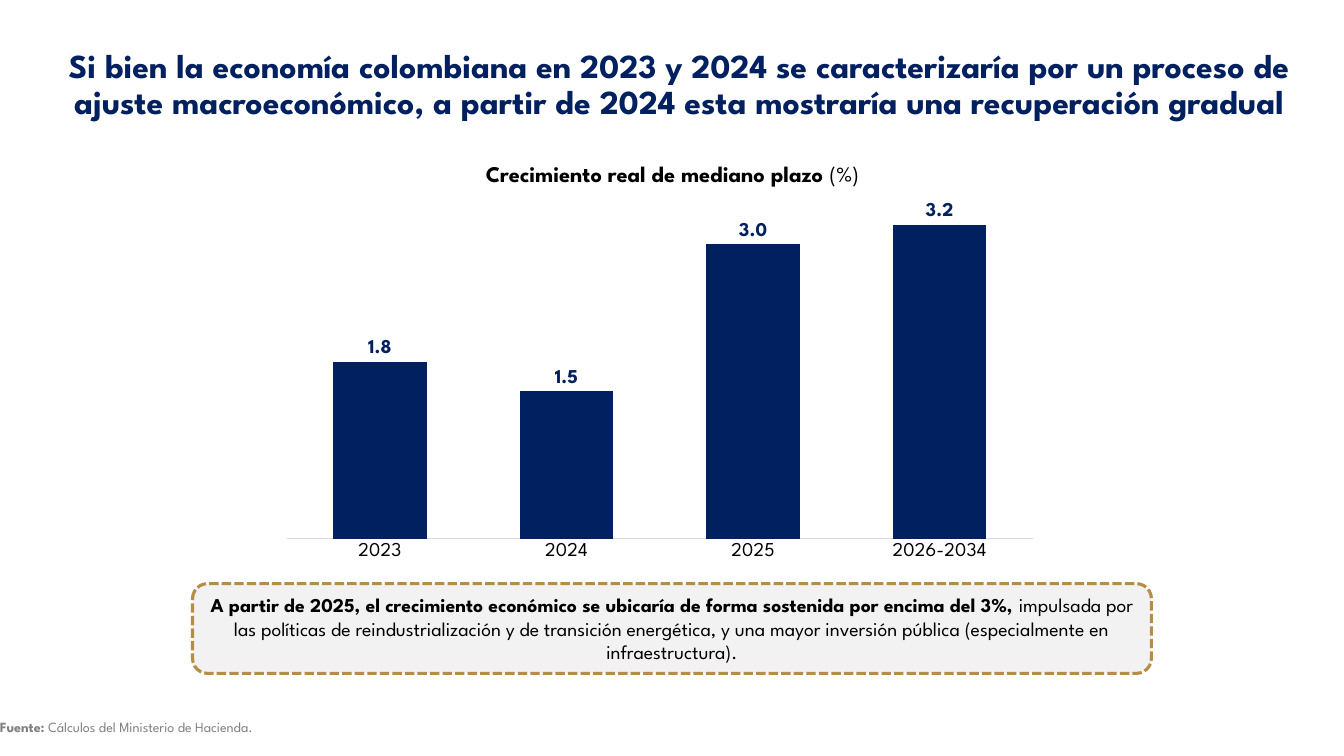
from lxml import etree
from pptx import Presentation
from pptx.chart import data
from pptx.dml import color
from pptx.enum import chart as charts, dml, shapes, text
from pptx.oxml import ns
from pptx.util import Inches, Pt

FONT = "League Spartan"
COLORS = {
    "navy": "002060",
    "black": "000000",
    "grey": "808080",
    "axis": "D9D9D9",
    "panel": "F2F2F2",
    "gold": "B58D47",
}
GROWTH = {"2023": 1.8, "2024": 1.5, "2025": 3.0, "2026-2034": 3.2}


def rgb(name):
    return color.RGBColor.from_string(COLORS[name])


def style_font(font, size, tone, bold):
    font.name = FONT
    font.size = Pt(size)
    font.bold = bold
    font.color.rgb = rgb(tone)


def write(frame, strong, plain="", size=14, tone="black", spacing=None,
          align=text.PP_ALIGN.CENTER, anchor=text.MSO_ANCHOR.TOP):
    frame.word_wrap = True
    frame.vertical_anchor = anchor
    paragraph = frame.paragraphs[0]
    paragraph.alignment = align
    paragraph.line_spacing = spacing
    for words, bold in ((strong, True), (plain, False)):
        if words:
            run = paragraph.add_run()
            run.text = words
            style_font(run.font, size, tone, bold)


def add_headline(slide, left, top, width, height):
    headline = slide.shapes.title
    headline.left, headline.top = Inches(left), Inches(top)
    headline.width, headline.height = Inches(width), Inches(height)
    write(headline.text_frame,
          "Si bien la economía colombiana en 2023 y 2024 se caracterizaría por un proceso de "
          "ajuste macroeconómico, a partir de 2024 esta mostraría una recuperación gradual",
          size=24, tone="navy", spacing=0.9, anchor=text.MSO_ANCHOR.MIDDLE)


def add_caption(slide, left, top, width, height, strong, plain, **style):
    caption = slide.shapes.add_textbox(Inches(left), Inches(top), Inches(width), Inches(height))
    write(caption.text_frame, strong, plain, **style)


def set_plot_area(growth_chart, **fractions):
    plot_area = growth_chart.plots[0]._element.getparent()
    for layout in plot_area.findall(ns.qn("c:layout")):
        plot_area.remove(layout)
    layout = etree.Element(ns.qn("c:layout"))
    manual = etree.SubElement(layout, ns.qn("c:manualLayout"))
    settings = {"layoutTarget": "inner", "xMode": "edge", "yMode": "edge", **fractions}
    for tag, value in settings.items():
        etree.SubElement(manual, ns.qn("c:" + tag)).set("val", str(value))
    plot_area.insert(0, layout)


def add_growth_chart(slide, left, top, width, height):
    growth = data.CategoryChartData(number_format="0.0")
    growth.categories = list(GROWTH)
    growth.add_series("Crecimiento real", list(GROWTH.values()))
    growth_chart = slide.shapes.add_chart(
        charts.XL_CHART_TYPE.COLUMN_CLUSTERED,
        Inches(left), Inches(top), Inches(width), Inches(height), growth).chart
    growth_chart.has_legend = False
    growth_chart.has_title = False
    style_font(growth_chart.font, 14, "navy", True)
    set_plot_area(growth_chart, x=0.02, y=0.02, w=0.96, h=0.9)

    years = growth_chart.category_axis
    years.major_tick_mark = charts.XL_TICK_MARK.NONE
    years.format.line.color.rgb = rgb("axis")
    years.format.line.width = Pt(0.75)
    style_font(years.tick_labels.font, 14, "black", False)

    percent = growth_chart.value_axis
    percent.minimum_scale, percent.maximum_scale = 0, 3.5
    percent.has_major_gridlines = False
    percent.visible = False

    columns = growth_chart.plots[0]
    columns.gap_width, columns.overlap = 100, -27
    columns.vary_by_categories = False
    columns.series[0].format.fill.solid()
    columns.series[0].format.fill.fore_color.rgb = rgb("navy")
    columns.has_data_labels = True
    labels = columns.data_labels
    labels.show_value = True
    labels.number_format = "#,##0.0"
    labels.number_format_is_linked = False
    labels.position = charts.XL_LABEL_POSITION.OUTSIDE_END
    style_font(labels.font, 14, "navy", True)


def add_conclusion(slide, left, top, width, height):
    conclusion = slide.shapes.add_shape(
        shapes.MSO_SHAPE.ROUNDED_RECTANGLE,
        Inches(left), Inches(top), Inches(width), Inches(height))
    conclusion.shadow.inherit = False
    conclusion.fill.solid()
    conclusion.fill.fore_color.rgb = rgb("panel")
    conclusion.line.color.rgb = rgb("gold")
    conclusion.line.width = Pt(2.25)
    conclusion.line.dash_style = dml.MSO_LINE.SQUARE_DOT
    write(conclusion.text_frame,
          "A partir de 2025, el crecimiento económico se ubicaría de forma sostenida "
          "por encima del 3%,",
          " impulsada por las políticas de reindustrialización y de transición energética, "
          "y una mayor inversión pública (especialmente en infraestructura).")


def main():
    deck = Presentation()
    deck.slide_width, deck.slide_height = Inches(13.33), Inches(7.5)
    slide = deck.slides.add_slide(deck.slide_layouts[5])
    add_headline(slide, 0.14, 0.2, 13.19, 1.3)
    add_caption(slide, -0.1, 7.08, 8.48, 0.27, "Fuente:",
                " Cálculos del Ministerio de Hacienda.",
                size=10, tone="grey", align=text.PP_ALIGN.JUSTIFY)
    add_growth_chart(slide, 2.69, 1.86, 7.71, 3.79)
    add_caption(slide, 3.41, 1.54, 6.52, 0.37,
                "Crecimiento real de mediano plazo ", "(%)", size=16)
    add_conclusion(slide, 1.91, 5.79, 9.51, 0.89)
    deck.save("out.pptx")


if __name__ == "__main__":
    main()
